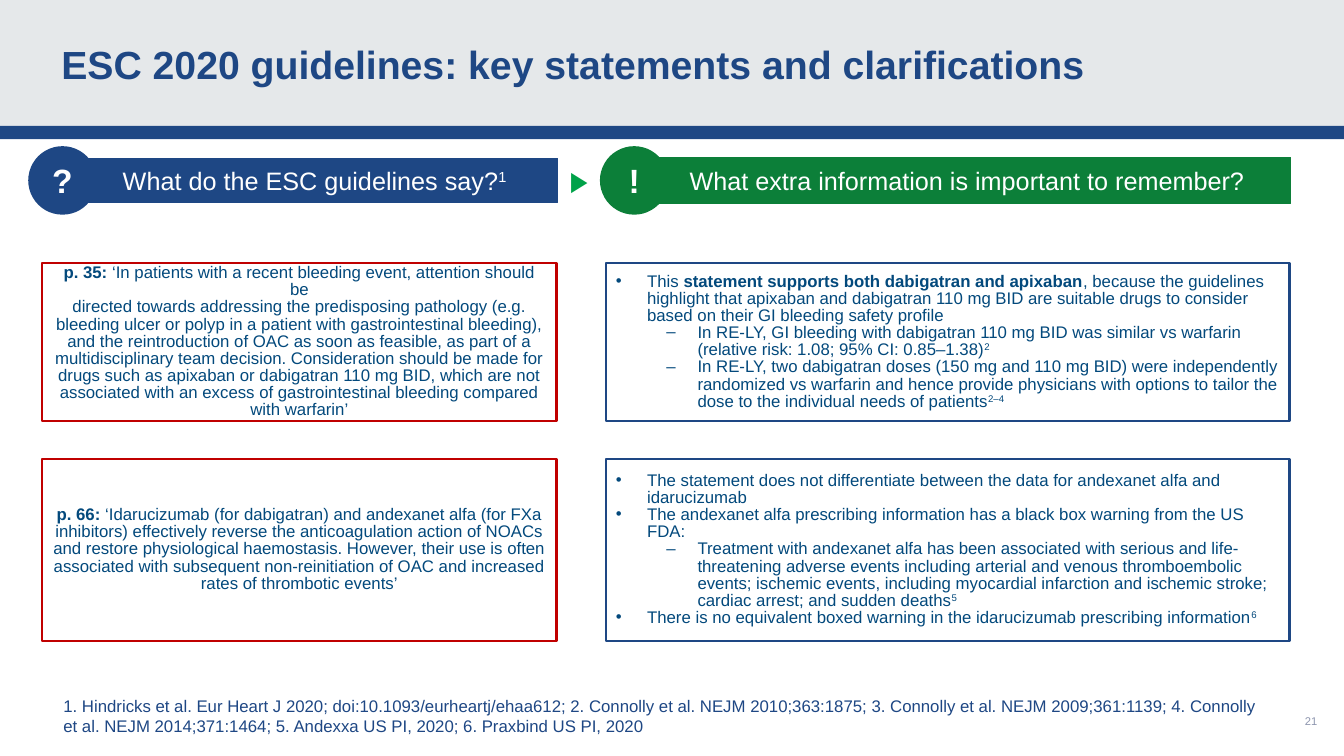
"""Build the slide on key statements and clarifications of the ESC 2020 guidelines."""
import lxml.etree
import pptx
import pptx.dml.color
import pptx.enum.shapes
import pptx.enum.text
import pptx.oxml.ns
import pptx.util

TITLE = "ESC 2020 guidelines: key statements and clarifications"
REFERENCES = (
    "1. Hindricks et al. Eur Heart J 2020; doi:10.1093/eurheartj/ehaa612; "
    "2. Connolly et al. NEJM 2010;363:1875; 3. Connolly et al. NEJM 2009;361:1139; "
    "4. Connolly et al. NEJM 2014;371:1464; 5. Andexxa US PI, 2020; 6. Praxbind US PI, 2020"
)
PAGE_NUMBER = "21"
HEADINGS = [
    {"symbol": "?", "runs": [("What do the ESC guidelines say?", ""), ("1", "super")],
     "color": "navy", "bar": (0.71, 1.57, 4.82, 0.44), "badge_left": 0.28},
    {"symbol": "!", "runs": [("What extra information is important to remember?", "")],
     "color": "green", "bar": (6.38, 1.56, 6.42, 0.46), "badge_left": 5.95},
]
STATEMENTS = [
    {
        "quote": [
            ("quote", [("p. 35: ", "bold"),
                       ("‘In patients with a recent bleeding event, attention should be", "")]),
            ("quote", [("directed towards addressing the predisposing pathology (e.g. bleeding ulcer or "
                        "polyp in a patient with gastrointestinal bleeding), and the reintroduction of OAC "
                        "as soon as feasible, as part of a multidisciplinary team decision. Consideration "
                        "should be made for drugs such as apixaban or dabigatran 110 mg BID, which are not "
                        "associated with an excess of gastrointestinal bleeding compared with warfarin’", "")]),
        ],
        "clarification": [
            ("point", [("This ", ""), ("statement supports both dabigatran and apixaban", "bold"),
                       (", because the guidelines highlight that apixaban and dabigatran 110 mg BID are "
                        "suitable drugs to consider based on their GI bleeding safety profile", "")]),
            ("detail", [("In RE-LY, GI bleeding with dabigatran 110 mg BID was similar vs warfarin "
                         "(relative risk: 1.08; 95% CI: 0.85–1.38)", ""), ("2", "super")]),
            ("detail", [("In RE-LY, two dabigatran doses (150 mg and 110 mg BID) were independently "
                         "randomized vs warfarin and hence provide physicians with options to tailor the "
                         "dose to the individual needs of patients", ""), ("2–4", "super")]),
        ],
    },
    {
        "quote": [
            ("quote", [("p. 66: ", "bold"),
                       ("‘Idarucizumab (for dabigatran) and andexanet alfa (for FXa inhibitors) effectively "
                        "reverse the anticoagulation action of NOACs and restore physiological haemostasis. "
                        "However, their use is often associated with subsequent non-reinitiation of OAC and "
                        "increased rates of thrombotic events’", "")]),
        ],
        "clarification": [
            ("point", [("The statement does not differentiate between the data for andexanet alfa "
                        "and idarucizumab", "")]),
            ("point", [("The andexanet alfa prescribing information has a black box warning "
                        "from the US FDA:", "")]),
            ("detail", [("Treatment with andexanet alfa has been associated with serious and "
                         "life-threatening adverse events including arterial and venous thromboembolic "
                         "events; ischemic events, including myocardial infarction and ischemic stroke; "
                         "cardiac arrest; and sudden deaths", ""), ("5", "super")]),
            ("point", [("There is no equivalent boxed warning in the idarucizumab "
                        "prescribing information", ""), ("6", "super")]),
        ],
    },
]

THEME = {
    "font": "Arial",
    "colors": {"navy": "1E4784", "green": "0C7F39", "arrow": "00A249", "red": "C00000",
               "body": "03497C", "band": "E5E8EA", "white": "FFFFFF", "muted": "8D95AE"},
    "sizes": {"title": 28, "badge": 24, "arrow": 20, "heading": 18, "body": 12, "page": 8},
}
WIDTH, HEIGHT = 13.33, 7.5
COLUMNS = {"quote": (0.42, 5.1, "red"), "clarification": (6.01, 6.78, "navy")}
ROWS = [(2.61, 1.57), (4.55, 1.81)]
BADGE_TOP, BADGE_SIZE = 1.45, 0.68
BULLETS = {"point": (0, "•", 0.31), "detail": (1, "–", 0.81)}
HANGING = 0.31

ALIGN = pptx.enum.text.PP_ALIGN
ANCHOR = pptx.enum.text.MSO_ANCHOR
SHAPE = pptx.enum.shapes.MSO_SHAPE


def color_of(name):
    return pptx.dml.color.RGBColor.from_string(THEME["colors"][name])


def apply(target, values):
    for name, value in values.items():
        setattr(target, name, value)


def add_bullet(paragraph, kind):
    level, character, margin = BULLETS[kind]
    paragraph.level = level
    properties = paragraph._p.get_or_add_pPr()
    properties.set("marL", str(pptx.util.Inches(margin)))
    properties.set("indent", str(-pptx.util.Inches(HANGING)))
    for tag, attribute, value in (("a:buFont", "typeface", THEME["font"]),
                                  ("a:buChar", "char", character)):
        lxml.etree.SubElement(properties, pptx.oxml.ns.qn(tag)).set(attribute, value)


def write(shape, paragraphs, size, color, bold=False, anchor=ANCHOR.MIDDLE, spacing=None):
    frame = shape.text_frame
    apply(frame, {"word_wrap": True, "vertical_anchor": anchor})
    for index, (kind, runs) in enumerate(paragraphs):
        paragraph = frame.add_paragraph() if index else frame.paragraphs[0]
        if kind in BULLETS:
            add_bullet(paragraph, kind)
        apply(paragraph, {"alignment": ALIGN.CENTER if kind == "quote" else ALIGN.LEFT,
                          "line_spacing": spacing})
        for text, style in runs:
            run = paragraph.add_run()
            run.text = text
            apply(run.font, {"name": THEME["font"], "size": pptx.util.Pt(THEME["sizes"][size]),
                             "bold": bold or style == "bold"})
            run.font.color.rgb = color_of(color)
            if style == "super":
                run._r.get_or_add_rPr().set("baseline", "30000")


def add_block(slide, kind, box, fill, line=None, line_width=0.75):
    shape = slide.shapes.add_shape(kind, *map(pptx.util.Inches, box))
    shape.shadow.inherit = False
    shape.fill.solid()
    shape.fill.fore_color.rgb = color_of(fill)
    if line:
        shape.line.color.rgb = color_of(line)
        shape.line.width = pptx.util.Pt(line_width)
    else:
        shape.line.fill.background()
    return shape


def add_label(slide, box, text, size, color, kind="plain", **options):
    label = slide.shapes.add_textbox(*map(pptx.util.Inches, box))
    write(label, [(kind, [(text, "")])], size, color, **options)


def main():
    presentation = pptx.Presentation()
    apply(presentation, {"slide_width": pptx.util.Inches(WIDTH),
                         "slide_height": pptx.util.Inches(HEIGHT)})
    slide = presentation.slides.add_slide(presentation.slide_layouts[6])

    add_block(slide, SHAPE.RECTANGLE, (0, 0, WIDTH, 1.26), "band")
    add_block(slide, SHAPE.RECTANGLE, (0, 1.25, WIDTH, 0.13), "navy")
    add_label(slide, (0.51, 0, 12.31, 1.26), TITLE, "title", "navy", bold=True)

    for heading in HEADINGS:
        color = heading["color"]
        bar = add_block(slide, SHAPE.RECTANGLE, heading["bar"], color, color)
        write(bar, [("quote", heading["runs"])], "heading", "white")
        badge = add_block(slide, SHAPE.OVAL,
                          (heading["badge_left"], BADGE_TOP, BADGE_SIZE, BADGE_SIZE), color)
        write(badge, [("quote", [(heading["symbol"], "")])], "badge", "white", bold=True)
    add_label(slide, (5.55, 1.57, 0.58, 0.44), "▶", "arrow", "arrow", anchor=ANCHOR.TOP)

    for (top, height), statement in zip(ROWS, STATEMENTS):
        for part, (left, width, line) in COLUMNS.items():
            box = add_block(slide, SHAPE.RECTANGLE, (left, top, width, height), "white", line, 1.5)
            write(box, statement[part], "body", "body", spacing=0.85)

    add_label(slide, (0.53, 6.85, 12.14, 0.5), REFERENCES, "body", "navy", anchor=ANCHOR.BOTTOM)
    add_label(slide, (12.67, 6.95, 0.67, 0.4), PAGE_NUMBER, "page", "muted", kind="quote")
    presentation.save("out.pptx")


if __name__ == "__main__":
    main()
